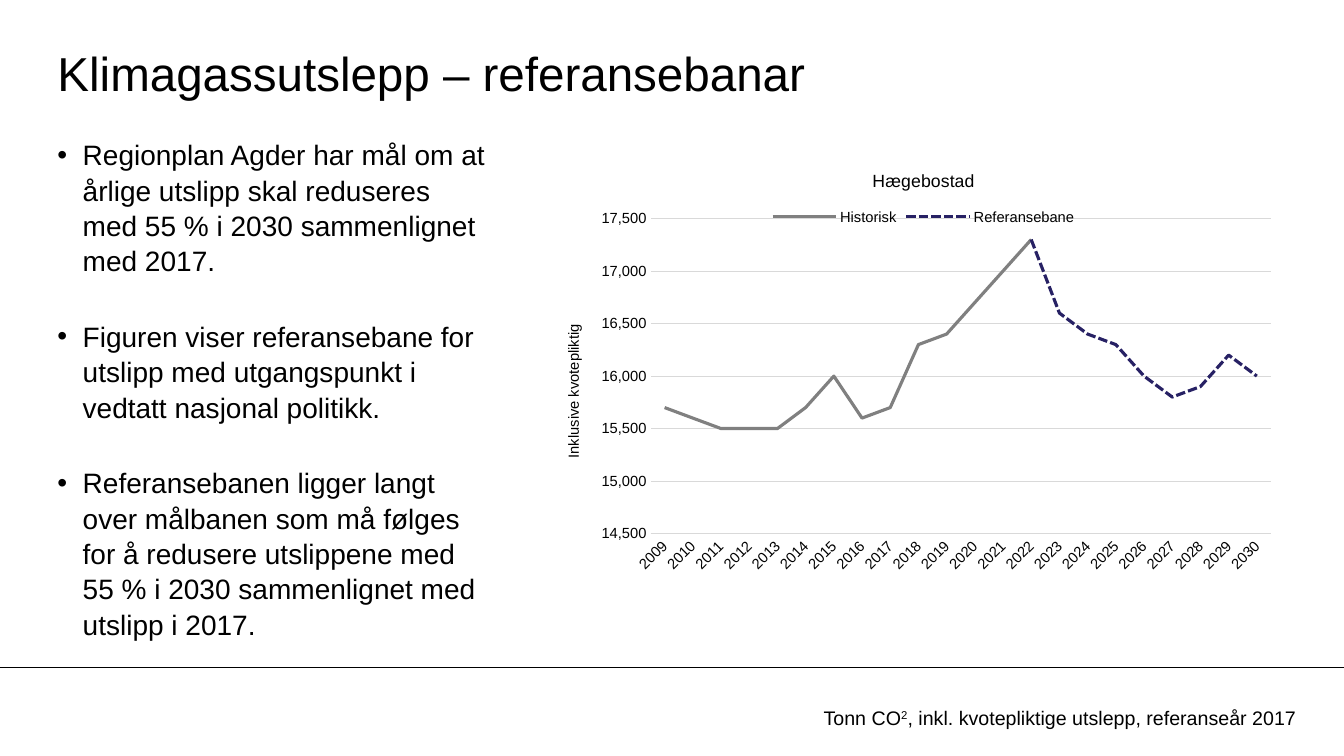
from lxml import etree
from pptx import Presentation, util as u
from pptx.chart.data import CategoryChartData
from pptx.dml.color import RGBColor
from pptx.enum import chart as charts, dml, shapes, text
from pptx.oxml import ns, parse_xml

PX = 9144  # 100 px to the inch
WIDTH, HEIGHT = 1333, 750
BLACK, GRID, GREY, NAVY = "000000", "D9D9D9", "808080", "272164"

BULLETS = [
    "Regionplan Agder har mål om at årlige utslipp skal reduseres med 55 % i 2030 sammenlignet med 2017.",
    "Figuren viser referansebane for utslipp med utgangspunkt i vedtatt nasjonal politikk.",
    "Referansebanen ligger langt over målbanen som må følges for å redusere utslippene med "
    "55 % i 2030 sammenlignet med utslipp i 2017.",
]
YEARS = range(2009, 2031)
HISTORIC = [15700, 15600, 15500, 15500, 15500, 15700, 16000,
            15600, 15700, 16300, 16400, 16700, 17000, 17300]
REFERENCE = [17300, 16600, 16400, 16300, 16000, 15800, 15900, 16200, 16000]


def px(*lengths):
    return [u.Emu(length * PX) for length in lengths]


def color(value):
    return RGBColor.from_string(value)


def style_font(font, size):
    font.name = "Arial"
    font.size = u.Pt(size)
    font.bold = False
    font.color.rgb = color(BLACK)


def style_line(line, value, width):
    line.color.rgb = color(value)
    line.width = u.Pt(width)


def add_text_box(page, box, inset=True):
    frame = page.shapes.add_textbox(*px(*box)).text_frame
    frame.word_wrap = True
    if not inset:
        frame.margin_left = frame.margin_top = frame.margin_right = frame.margin_bottom = 0
    return frame


def add_title(page, box):
    frame = add_text_box(page, box, inset=False)
    frame.vertical_anchor = text.MSO_ANCHOR.MIDDLE
    frame.text = "Klimagassutslepp – referansebanar"
    style_font(frame.paragraphs[0].runs[0].font, 34)


def add_bullets(page, box):
    frame = add_text_box(page, box, inset=False)
    for index, wording in enumerate(BULLETS):
        para = frame.add_paragraph() if index else frame.paragraphs[0]
        para.text = wording
        para.line_spacing = 1.05
        if index:
            para.space_before = u.Pt(29)
        # Hanging bullet
        props = para._p.get_or_add_pPr()
        indent = 25 * PX
        props.set("marL", str(indent))
        props.set("indent", str(-indent))
        etree.SubElement(props, ns.qn("a:buFont")).set("typeface", "Arial")
        etree.SubElement(props, ns.qn("a:buChar")).set("char", "•")
        style_font(para.runs[0].font, 20)


def add_footer(page, box, rule_top):
    # Rule across the page
    rule = page.shapes.add_connector(shapes.MSO_CONNECTOR.STRAIGHT, *px(0, rule_top, WIDTH, rule_top))
    style_line(rule.line, BLACK, 0.75)
    etree.SubElement(rule._element.spPr, ns.qn("a:effectLst"))
    # Unit caption with a raised 2
    para = add_text_box(page, box).paragraphs[0]
    for wording, raised in [("Tonn CO", False), ("2", True),
                            (", inkl. kvotepliktige utslepp, referanseår 2017", False)]:
        span = para.add_run()
        span.text = wording
        style_font(span.font, 14)
        if raised:
            span.font._element.set("baseline", "30000")


def set_plot_area(chart, x, y, w, h):
    area = chart._chartSpace.chart.plotArea
    for old in area.findall(ns.qn("c:layout")):
        area.remove(old)
    area.insert(0, parse_xml(
        f'<c:layout {ns.nsdecls("c")}><c:manualLayout><c:layoutTarget val="inner"/>'
        f'<c:xMode val="edge"/><c:yMode val="edge"/><c:x val="{x}"/><c:y val="{y}"/>'
        f'<c:w val="{w}"/><c:h val="{h}"/></c:manualLayout></c:layout>'))


def style_axes(chart):
    years, tonnes = chart.category_axis, chart.value_axis
    for axis in (years, tonnes):
        axis.major_tick_mark = axis.minor_tick_mark = charts.XL_TICK_MARK.NONE
        style_font(axis.tick_labels.font, 10.5)
    style_line(years.format.line, GRID, 0.75)
    years._element.txPr.find(ns.qn("a:bodyPr")).set("rot", "-2700000")
    tonnes.minimum_scale, tonnes.maximum_scale, tonnes.major_unit = 14500, 17500, 500
    tonnes.tick_labels.number_format = "#,##0"
    tonnes.tick_labels.number_format_is_linked = False
    tonnes.format.line.fill.background()
    style_line(tonnes.major_gridlines.format.line, GRID, 0.75)
    frame = tonnes.axis_title.text_frame
    frame.text = "Inklusive kvotepliktig"
    style_font(frame.paragraphs[0].runs[0].font, 10.5)


def add_emission_chart(page, box):
    data = CategoryChartData(number_format="#,##0")
    data.categories = [str(year) for year in YEARS]
    data.add_series("Historisk", HISTORIC + [None] * (len(YEARS) - len(HISTORIC)))
    data.add_series("Referansebane", [None] * (len(YEARS) - len(REFERENCE)) + REFERENCE)
    chart = page.shapes.add_chart(charts.XL_CHART_TYPE.LINE, *px(*box), data).chart
    style_font(chart.font, 10.5)
    # Title and legend
    chart.has_title = True
    chart.chart_title.text_frame.text = "Hægebostad"
    chart.chart_title.include_in_layout = False
    style_font(chart.chart_title.text_frame.paragraphs[0].runs[0].font, 12.6)
    chart.has_legend = True
    chart.legend.position = charts.XL_LEGEND_POSITION.TOP
    chart.legend.include_in_layout = False
    style_font(chart.legend.font, 10.5)
    # Axes and series
    style_axes(chart)
    set_plot_area(chart, 0.137, 0.147, 0.825, 0.698)
    chart.plots[0].vary_by_categories = False
    for series, value in zip(chart.plots[0].series, (GREY, NAVY)):
        series.smooth = False
        series.marker.style = charts.XL_MARKER_STYLE.NONE
        style_line(series.format.line, value, 2.25)
    series.format.line.dash_style = dml.MSO_LINE.SQUARE_DOT


def main():
    deck = Presentation()
    deck.slide_width, deck.slide_height = px(WIDTH, HEIGHT)
    page = deck.slides.add_slide(deck.slide_layouts[6])
    add_title(page, (57, 34, 1110, 75))
    add_bullets(page, (57, 135, 425, 518))
    add_footer(page, (807, 695, 509, 34), rule_top=662)
    add_emission_chart(page, (543, 151, 746, 448))
    deck.save("out.pptx")


if __name__ == "__main__":
    main()
